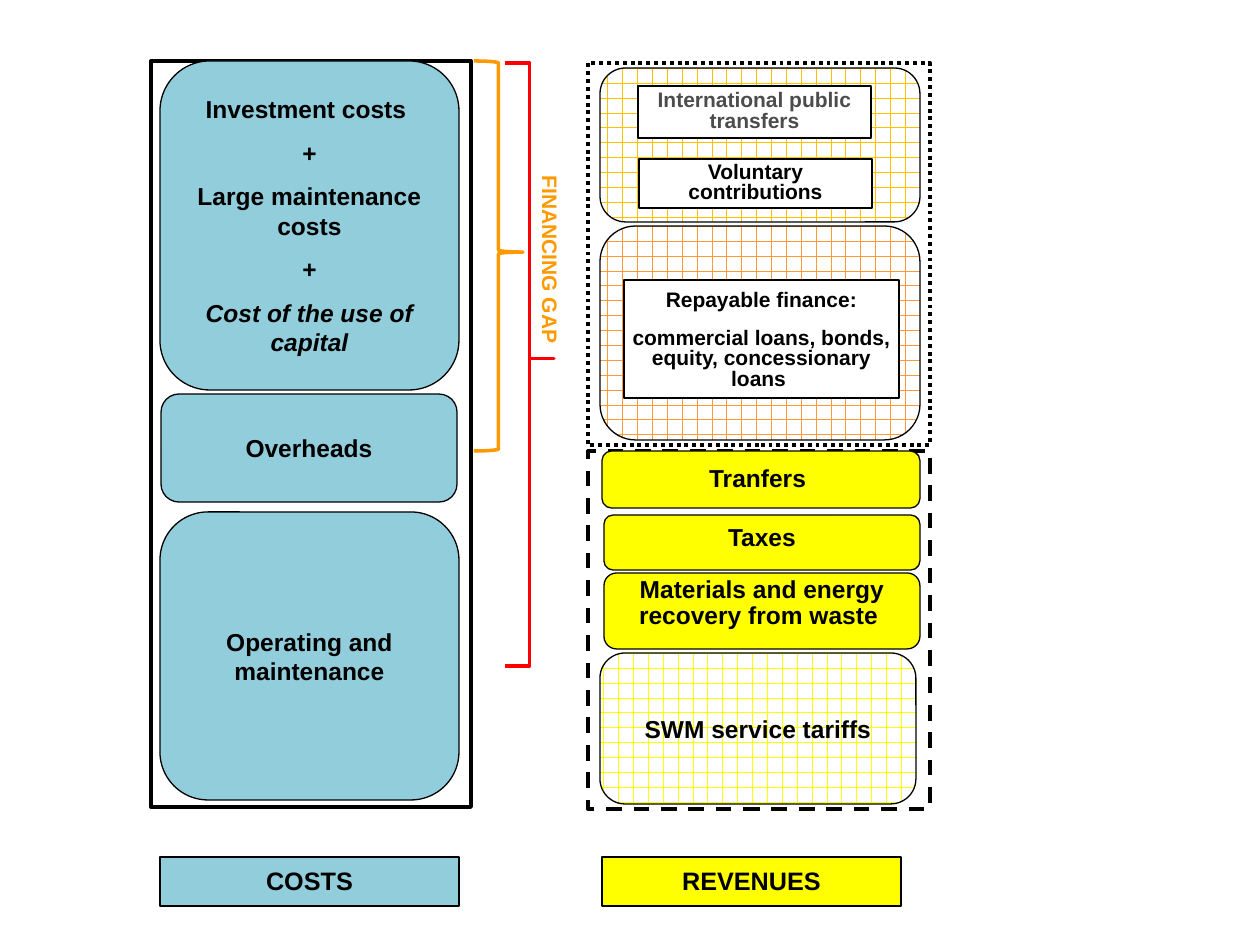
from pptx import Presentation
from pptx import util as u
from pptx.dml.color import RGBColor
from pptx.enum import dml, shapes, text

SCALE = 914400 / 126
COLORS = {"black": "000000", "white": "FFFFFF", "blue": "92CDDC", "yellow": "FFFF00",
          "amber": "FFC000", "peach": "FF9933", "orange": "FF9900", "red": "FF0000",
          "gray": "4C4C4C"}
RECT = shapes.MSO_SHAPE.RECTANGLE
ROUND = shapes.MSO_SHAPE.ROUNDED_RECTANGLE
BRACE = shapes.MSO_SHAPE.RIGHT_BRACE
DASH = dml.MSO_LINE.DASH
DOTS = dml.MSO_LINE.ROUND_DOT
TOP = text.MSO_ANCHOR.TOP
MIDDLE = text.MSO_ANCHOR.MIDDLE

FRAMES = [
    ((588, 451, 342, 358), {"dash": DASH}),
    ((151, 61, 320, 746), {"fill": "white"}),
    ((588, 63, 342, 382), {"dash": DOTS}),
]
COSTS = [
    ((160, 512, 299, 288), ["Operating and maintenance"], {}),
    ((160, 61, 299, 329),
     ["Investment costs ", "+", "Large maintenance costs", "+", "Cost of the use of capital"],
     {"before": 2, "after": 6, "inset": (3, 6, 3, 6), "italic_last": True}),
    ((161, 394, 296, 108), ["Overheads"], {}),
]
REVENUES = [
    ((604, 515, 316, 55), ["Taxes"], {"spacing": [0.96], "anchor": TOP}),
    ((602, 451, 318, 57), ["Tranfers "], {"spacing": [0.96], "inset": (13, 1, 13, 1)}),
    ((604, 573, 316, 76), ["Materials and energy recovery from waste "],
     {"spacing": [0.88], "inset": (13, 1, 13, 6), "anchor": TOP}),
]
BRICKS = [
    ((600, 653, 316, 151), "yellow", ["SWM service tariffs"]),
    ((600, 226, 320, 214), "peach", []),
    ((600, 68, 320, 154), "amber", []),
]
LABELS = [
    ((624, 280, 275, 118),
     ["Repayable finance:", "commercial loans, bonds, equity, concessionary loans "],
     {"spacing": [0.96, 0.8]}),
    ((638, 86, 233, 52), ["International public transfers"],
     {"spacing": [0.8], "color": "gray"}),
    ((639, 159, 233, 49), ["Voluntary contributions"], {"spacing": [0.8], "before": 1}),
]
CAPTIONS = [
    ((160, 857, 299, 49), "costs", "blue"),
    ((602, 857, 299, 49), "revenues", "yellow"),
]
BRACES = [
    ((474, 61, 49, 390), "orange", 0.04),
    ((505, 63, 49, 603), "red", 0),
]
GAP_LABEL = ((513, 68, 73, 383), "FINANCING GAP")


def px(value):
    return u.Emu(round(value * SCALE))


def rgb(name):
    return RGBColor.from_string(COLORS[name])


def add_box(page, kind, place, fill=None, brick=None, line="black", width=0.75, dash=None):
    box = page.shapes.add_shape(kind, *map(px, place))
    box.shadow.inherit = False
    if brick:
        box.fill.patterned()
        box.fill.pattern = dml.MSO_PATTERN.HORIZONTAL_BRICK
        box.fill.fore_color.rgb = rgb(brick)
        box.fill.back_color.rgb = rgb("white")
    elif fill:
        box.fill.solid()
        box.fill.fore_color.rgb = rgb(fill)
    else:
        box.fill.background()
    box.line.color.rgb = rgb(line)
    box.line.width = u.Pt(width)
    if dash:
        box.line.dash_style = dash
    return box


def write(box, lines, size=14, color="black", spacing=(), before=0, after=10,
          inset=(13, 6, 13, 6), anchor=MIDDLE, italic_last=False, small_caps=False):
    frame = box.text_frame
    frame.word_wrap = True
    frame.vertical_anchor = anchor
    frame.margin_left, frame.margin_top, frame.margin_right, frame.margin_bottom = map(px, inset)
    for index, line in enumerate(lines):
        para = frame.add_paragraph() if index else frame.paragraphs[0]
        para.alignment = text.PP_ALIGN.CENTER
        para.space_before, para.space_after = u.Pt(before), u.Pt(after)
        if spacing:
            para.line_spacing = spacing[index]
        span = para.add_run()
        span.text = line
        span.font.name, span.font.size, span.font.bold = "Arial", u.Pt(size), True
        span.font.color.rgb = rgb(color)
        if italic_last and index == len(lines) - 1:
            span.font.italic = True
        if small_caps:
            span.font._element.set("cap", "small")


def main():
    deck = Presentation()
    deck.slide_width, deck.slide_height = px(1260), px(945)
    page = deck.slides.add_slide(deck.slide_layouts[6])

    for place, look in FRAMES:
        add_box(page, RECT, place, width=2.25, **look)
    for blocks, fill in ((COSTS, "blue"), (REVENUES, "yellow")):
        for place, lines, style in blocks:
            write(add_box(page, ROUND, place, fill=fill), lines, **style)
    for place, brick, lines in BRICKS:
        write(add_box(page, ROUND, place, brick=brick), lines)
    for place, lines, style in LABELS:
        box = add_box(page, RECT, place, fill="white")
        write(box, lines, size=12, inset=(0, 0, 0, 0), **style)
    for place, caption, fill in CAPTIONS:
        box = add_box(page, RECT, place, fill=fill)
        write(box, [caption], size=18, spacing=[0.8], small_caps=True)
    for place, color, curl in BRACES:
        brace = add_box(page, BRACE, place, line=color, width=2)
        brace.adjustments[0], brace.adjustments[1] = curl, 0.49

    place, caption = GAP_LABEL
    box = page.shapes.add_textbox(*map(px, place))
    write(box, [caption], size=12, color="orange", spacing=[0.96], inset=(0, 0, 0, 0))
    box.text_frame._txBody.bodyPr.set("vert", "vert")
    deck.save("out.pptx")


if __name__ == "__main__":
    main()
